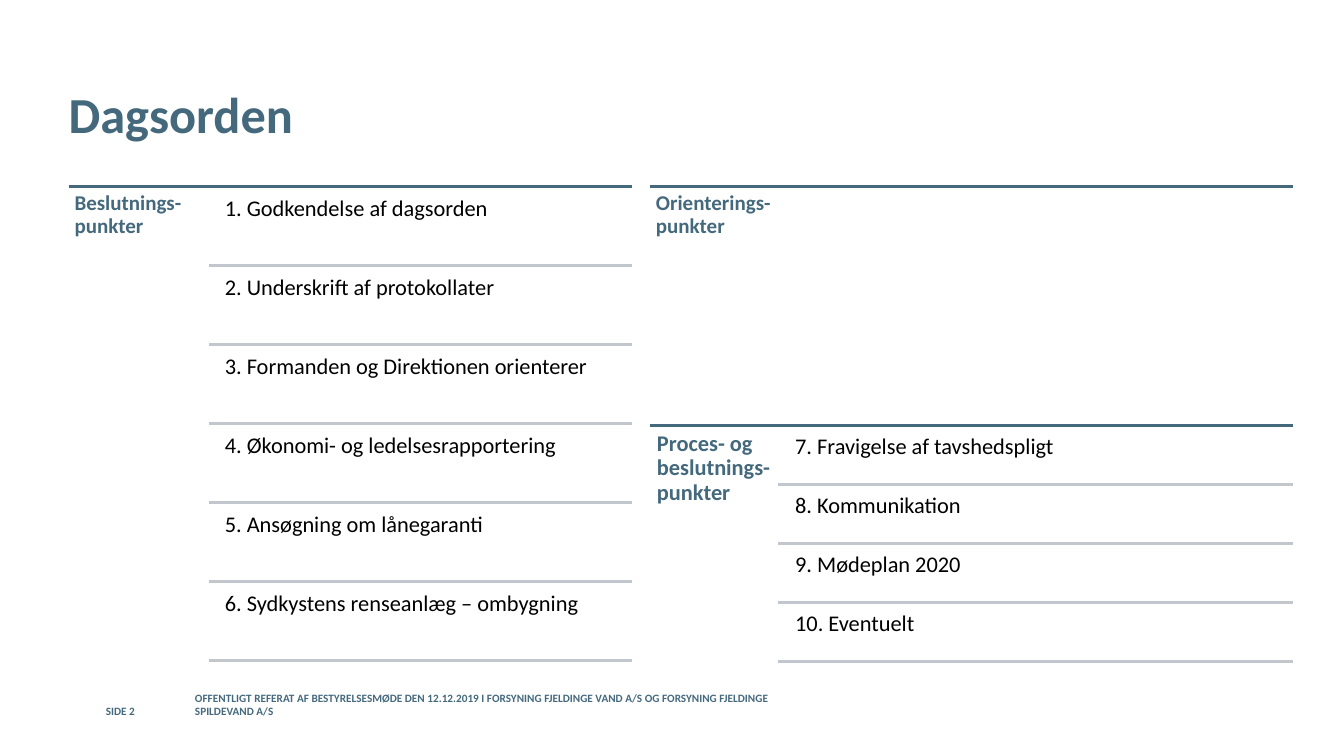
from lxml import etree
from pptx import Presentation
from pptx import util as u
from pptx.dml.color import RGBColor
from pptx.enum import shapes, text
from pptx.oxml.ns import qn

W, H = 13.33, 7.5
BLUE, GREY, BLACK = "44697D", "C1C7CC", "000000"
FOOTER = ("OFFENTLIGT REFERAT AF BESTYRELSESMØDE DEN 12.12.2019 I FORSYNING "
          "FJELDINGE VAND A/S OG FORSYNING FJELDINGE SPILDEVAND A/S")
DECISIONS = ["1. Godkendelse af dagsorden", "2. Underskrift af protokollater",
             "3. Formanden og Direktionen orienterer",
             "4. Økonomi- og ledelsesrapportering",
             "5. Ansøgning om lånegaranti",
             "6. Sydkystens renseanlæg – ombygning"]
PROCESS = ["7. Fravigelse af tavshedspligt", "8. Kommunikation",
           "9. Mødeplan 2020", "10. Eventuelt"]


def color(value):
    """Turn a hex string into a colour."""
    return RGBColor.from_string(value)


def write(s, words, size, fill, bold=False, inset=0.0,
          anchor=text.MSO_ANCHOR.TOP, spacing=1.0):
    """Fill a shape with one formatted paragraph."""
    tf = s.text_frame
    tf.word_wrap = True
    tf.auto_size = text.MSO_AUTO_SIZE.NONE
    tf.vertical_anchor = anchor
    tf.margin_left = tf.margin_right = u.Inches(inset)
    tf.margin_top = tf.margin_bottom = u.Inches(inset)
    p = tf.paragraphs[0]
    p.text = words
    p.alignment = text.PP_ALIGN.LEFT
    p.line_spacing = spacing
    font = p.font
    font.name, font.size, font.bold = "Calibri", u.Pt(size), bold
    font.color.rgb = color(fill)


def add_text(slide, box, *args, **kwargs):
    """Add a text box with one paragraph."""
    s = slide.shapes.add_textbox(*map(u.Inches, box))
    write(s, *args, **kwargs)


def add_rule(slide, left, right, y, fill):
    """Draw a horizontal rule."""
    s = slide.shapes.add_connector(
        shapes.MSO_CONNECTOR.STRAIGHT,
        u.Inches(left), u.Inches(y), u.Inches(right), u.Inches(y))
    s.line.color.rgb = color(fill)
    s.line.width = u.Pt(2)
    etree.SubElement(s._element.spPr, qn("a:effectLst"))


def add_section(slide, box, label, items, share, size=15, inset=0.06):
    """Place a ruled section: a label column and evenly spaced items."""
    left, top, width, height = box
    right, column = left + width, left + share * width
    add_rule(slide, left, right, top, BLUE)
    add_text(slide, (left, top, share * width, height), label, size, BLUE,
             bold=True, inset=inset, spacing=0.9)
    row = height / (1.05 * len(items) + 0.05)
    gap, indent = 0.05 * row, 0.015 * width
    for i, item in enumerate(items):
        y = top + gap + i * (row + gap)
        add_text(slide, (column + indent, y, right - column - indent, row),
                 item, 16, BLACK, inset=0.07, spacing=0.9)
        add_rule(slide, column, right, y + row, GREY)


def add_title(slide, box, words):
    """Place and format the title."""
    s = slide.shapes.title
    s.left, s.top, s.width, s.height = map(u.Inches, box)
    write(s, words, 36, BLUE, bold=True, anchor=text.MSO_ANCHOR.MIDDLE)


def add_footer(slide, box):
    """Place the page number and the meeting line."""
    left, top, width, height = box
    page = 0.1 * width
    gap = 0.13 * width
    for x, w, words in ((left, page, "SIDE 2"),
                        (left + gap, width - gap, FOOTER)):
        add_text(slide, (x, top, w, height), words, 8, BLUE, bold=True,
                 anchor=text.MSO_ANCHOR.BOTTOM)


def add_agenda(slide, box):
    """Place the three agenda sections in two columns."""
    left, top, width, height = box
    first, second, half = 0.46 * width, 0.525 * width, height / 2
    x = left + width - second
    add_section(slide, (left, top, first, height),
                "Beslutnings-punkter", DECISIONS, 0.25)
    add_section(slide, (x, top, second, half),
                "Orienterings-punkter", [], 0.2)
    add_section(slide, (x, top + half, second, half),
                "Proces- og beslutnings-punkter", PROCESS, 0.2, 16, 0.07)


def main():
    """Build and save the agenda slide."""
    prs = Presentation()
    prs.slide_width, prs.slide_height = u.Inches(W), u.Inches(H)
    slide = prs.slides.add_slide(prs.slide_layouts[5])
    add_title(slide, (0.68, 0.4, 11.5, 1.45), "Dagsorden")
    add_agenda(slide, (0.68, 1.85, 12.14, 4.74))
    add_footer(slide, (1.05, 6.93, 6.8, 0.19))
    prs.save("out.pptx")


if __name__ == "__main__":
    main()
